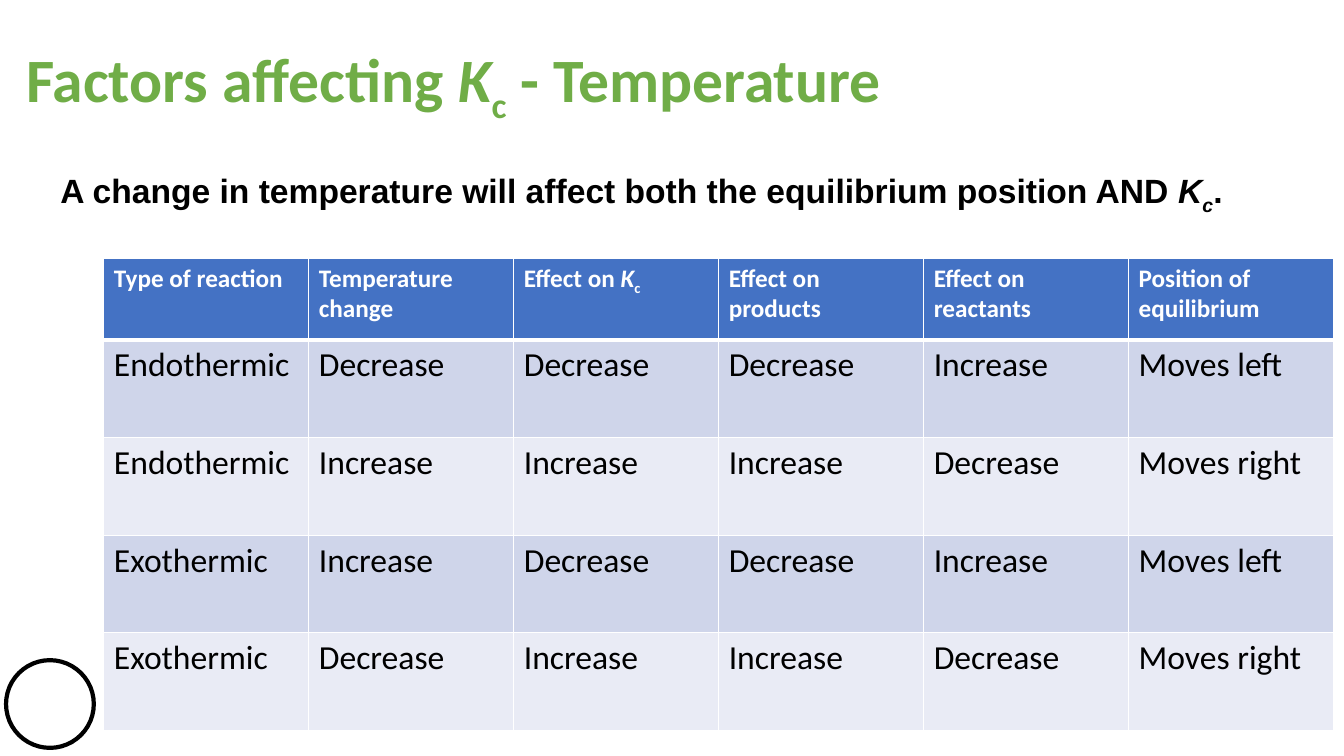
from dataclasses import dataclass

from lxml.etree import SubElement
from pptx import Presentation
from pptx.dml.color import RGBColor
from pptx.enum.shapes import MSO_SHAPE
from pptx.enum.text import MSO_ANCHOR
from pptx.oxml.ns import qn
from pptx.slide import Slide
from pptx.table import _Cell
from pptx.text.text import _Paragraph
from pptx.util import Emu, Inches, Pt

WHITE = RGBColor(0xFF, 0xFF, 0xFF)
BLACK = RGBColor(0x00, 0x00, 0x00)
GREEN = RGBColor(0x70, 0xAD, 0x47)
HEADER_BLUE = RGBColor(0x44, 0x72, 0xC4)
BAND_DARK = RGBColor(0xCF, 0xD5, 0xEA)
BAND_LIGHT = RGBColor(0xE9, 0xEB, 0xF5)

SLIDE_WIDTH, SLIDE_HEIGHT = Inches(13.33), Inches(7.5)


@dataclass(frozen=True)
class Frame:
    """Place and size in percent of the slide's width and height."""
    left: float
    top: float
    width: float
    height: float

    def lengths(self) -> tuple[Emu, Emu, Emu, Emu]:
        return (across(self.left), down(self.top),
                across(self.width), down(self.height))


@dataclass(frozen=True)
class Span:
    text: str
    italic: bool = False
    subscript: bool = False


@dataclass(frozen=True)
class Style:
    font: str
    size: float
    color: RGBColor
    bold: bool = True


@dataclass(frozen=True)
class TextBlock:
    frame: Frame
    spans: list[Span]
    style: Style
    anchor: MSO_ANCHOR = MSO_ANCHOR.TOP
    line_spacing: float = 1.0
    space_after: float = 0


def across(percent: float) -> Emu:
    return Emu(round(SLIDE_WIDTH * percent / 100))


def down(percent: float) -> Emu:
    return Emu(round(SLIDE_HEIGHT * percent / 100))


K = Span("K", italic=True)
SUB_C = Span("c", subscript=True)
HEADER_STYLE = Style("Calibri", 18, WHITE)
BODY_STYLE = Style("Calibri", 24, BLACK, bold=False)

TEXT_BLOCKS = [
    TextBlock(Frame(1.2, 2.27, 86.5, 16.67),
              [Span("Factors affecting "), K, SUB_C, Span(" - Temperature")],
              Style("Calibri", 44, GREEN), MSO_ANCHOR.MIDDLE, line_spacing=0.9),
    TextBlock(Frame(3.75, 21.87, 93.25, 6.67),
              [Span("A change in temperature will affect both the equilibrium position AND "),
               K, Span("c", italic=True, subscript=True), Span(".")],
              Style("Arial", 24, BLACK), space_after=2),
]

CIRCLE_FRAME = Frame(0.45, 87.33, 6.53, 11.6)
TABLE_FRAME = Frame(7.73, 34.13, 91.5, 62.53)
HEADER_HEIGHT = 10.8

HEADINGS = [
    [Span("Type of reaction")],
    [Span("Temperature change")],
    [Span("Effect on "), K, SUB_C],
    [Span("Effect on products")],
    [Span("Effect on reactants")],
    [Span("Position of equilibrium")],
]
REACTIONS = [
    ["Endothermic", "Decrease", "Decrease", "Decrease", "Increase", "Moves left"],
    ["Endothermic", "Increase", "Increase", "Increase", "Decrease", "Moves right"],
    ["Exothermic", "Increase", "Decrease", "Decrease", "Increase", "Moves left"],
    ["Exothermic", "Decrease", "Increase", "Increase", "Decrease", "Moves right"],
]


def write_spans(para: _Paragraph, spans: list[Span], style: Style) -> None:
    for span in spans:
        run = para.add_run()
        run.text = span.text
        run.font.name = style.font
        run.font.size = Pt(style.size)
        run.font.bold = style.bold
        run.font.italic = span.italic
        run.font.color.rgb = style.color
        if span.subscript:
            run._r.get_or_add_rPr().set("baseline", "-25000")


def add_text_block(slide: Slide, block: TextBlock) -> None:
    box = slide.shapes.add_textbox(*block.frame.lengths())
    box.text_frame.word_wrap = True
    box.text_frame.vertical_anchor = block.anchor
    para = box.text_frame.paragraphs[0]
    para.line_spacing = block.line_spacing
    para.space_after = Pt(block.space_after)
    write_spans(para, block.spans, block.style)


def add_circle(slide: Slide, frame: Frame) -> None:
    circle = slide.shapes.add_shape(MSO_SHAPE.OVAL, *frame.lengths())
    circle.shadow.inherit = False
    circle.fill.solid()
    circle.fill.fore_color.rgb = WHITE
    circle.line.color.rgb = BLACK
    circle.line.width = Pt(3)


def set_borders(cell: _Cell, top: float, bottom: float) -> None:
    properties = cell._tc.get_or_add_tcPr()
    for side, width in {"lnL": 1, "lnR": 1, "lnT": top, "lnB": bottom}.items():
        line = SubElement(properties, qn(f"a:{side}"), w=str(Pt(width)))
        fill = SubElement(line, qn("a:solidFill"))
        SubElement(fill, qn("a:srgbClr"), val=str(WHITE))


def add_reaction_table(slide: Slide, frame: Frame) -> None:
    rows = [HEADINGS] + [[[Span(word)] for word in words] for words in REACTIONS]
    table = slide.shapes.add_table(len(rows), len(HEADINGS), *frame.lengths()).table
    table.first_row = False
    table.horz_banding = False
    for column in table.columns:
        column.width = across(frame.width / len(HEADINGS))
    body_height = (frame.height - HEADER_HEIGHT) / len(REACTIONS)
    for row_index, row in enumerate(rows):
        is_header = row_index == 0
        band = BAND_DARK if row_index % 2 else BAND_LIGHT
        table.rows[row_index].height = down(HEADER_HEIGHT if is_header else body_height)
        for column_index, spans in enumerate(row):
            cell = table.cell(row_index, column_index)
            set_borders(cell, top=3 if row_index == 1 else 1, bottom=3 if is_header else 1)
            cell.fill.solid()
            cell.fill.fore_color.rgb = HEADER_BLUE if is_header else band
            write_spans(cell.text_frame.paragraphs[0], spans,
                        HEADER_STYLE if is_header else BODY_STYLE)


def main() -> None:
    deck = Presentation()
    deck.slide_width, deck.slide_height = SLIDE_WIDTH, SLIDE_HEIGHT
    slide = deck.slides.add_slide(deck.slide_layouts[6])

    # Corner circle
    add_circle(slide, CIRCLE_FRAME)

    # Title and statement
    for block in TEXT_BLOCKS:
        add_text_block(slide, block)

    # Effects of temperature on each type of reaction
    add_reaction_table(slide, TABLE_FRAME)

    deck.save("out.pptx")


if __name__ == "__main__":
    main()
